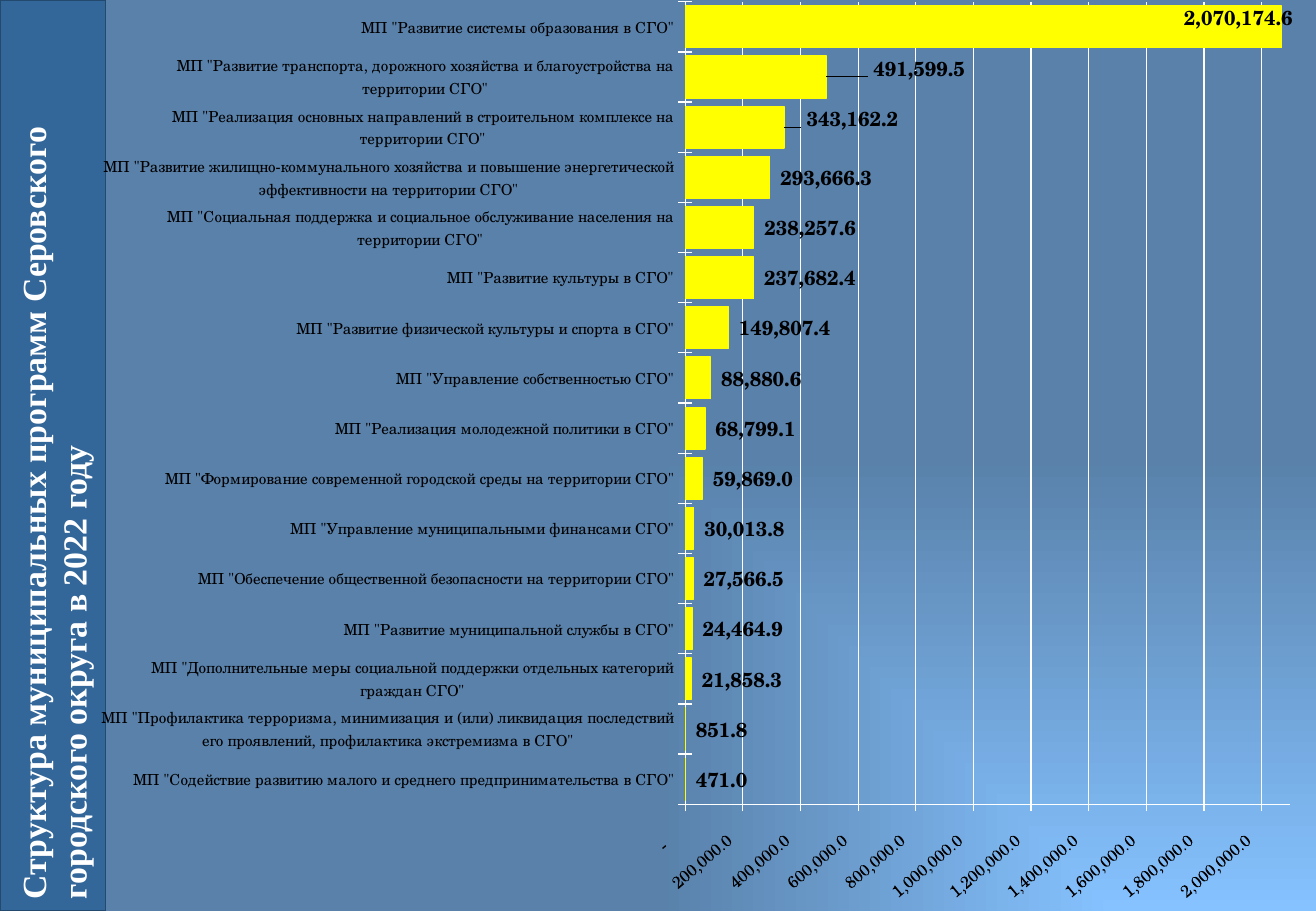
from lxml import etree
from pptx import Presentation
from pptx.chart.data import CategoryChartData as ChartData
from pptx.dml.color import RGBColor as RGB
from pptx.enum.chart import XL_CHART_TYPE as CT, XL_LABEL_POSITION as LP, XL_TICK_MARK as TM
from pptx.enum.shapes import MSO_SHAPE as SHAPE
from pptx.enum.text import MSO_ANCHOR as ANCHOR, PP_ALIGN as ALIGN
from pptx.oxml import parse_xml
from pptx.oxml.ns import nsdecls, qn
from pptx.util import Pt

COLORS = {"glow": "85C2FF", "base": "5981AA", "band": "336699", "edge": "23496F",
          "bar": "FFFF00", "white": "FFFFFF", "black": "000000"}
SERIF, SCHOOL = "Times New Roman", "TeX Gyre Schola"
NUMBER = r'_-* #,##0.0\ _₽_-;\-* #,##0.0\ _₽_-;_-* "-"?\ _₽_-;_-@_-'

TITLE = "Структура муниципальных программ Серовского городского округа в 2022 году"
PROGRAMS = [
    ('МП "Содействие развитию малого и среднего предпринимательства в СГО"', 471),
    ('МП "Профилактика терроризма, минимизация и (или) ликвидация последствий его '
     'проявлений, профилактика экстремизма в СГО"', 851.8),
    ('МП "Дополнительные меры социальной поддержки отдельных категорий граждан СГО"', 21858.3),
    ('МП "Развитие муниципальной службы в СГО"', 24464.9),
    ('МП "Обеспечение общественной безопасности на территории СГО"', 27566.5),
    ('МП "Управление муниципальными финансами СГО"', 30013.8),
    ('МП "Формирование современной городской среды на территории СГО"', 59869),
    ('МП "Реализация молодежной политики в СГО"', 68799.1),
    ('МП "Управление собственностью СГО"', 88880.6),
    ('МП "Развитие физической культуры и спорта в СГО"', 149807.4),
    ('МП "Развитие культуры в СГО"', 237682.4),
    ('МП "Социальная поддержка и социальное обслуживание населения на территории СГО"', 238257.6),
    ('МП "Развитие жилищно-коммунального хозяйства и повышение энергетической '
     'эффективности на территории СГО"', 293666.3),
    ('МП "Реализация основных направлений в строительном комплексе на территории СГО"', 343162.2),
    ('МП "Развитие транспорта, дорожного хозяйства и благоустройства на территории СГО"', 491599.5),
    ('МП "Развитие системы образования в СГО"', 2070174.6),
]
# Label shifts as shares of the chart size, by bar index
LABEL_SHIFTS = {13: (0.01, -0.01), 14: (0.03, -0.01), 15: (-0.09, -0.01)}


def set_all(obj, **values):
    for name, value in values.items():
        setattr(obj, name, value)


def layout(**values):
    items = "".join(f'<c:{k} val="{v}"/>' for k, v in values.items())
    return parse_xml(f'<c:layout {nsdecls("c")}><c:manualLayout>{items}</c:manualLayout></c:layout>')


class Deck:
    def __init__(self, width, height):
        self.prs = Presentation()
        set_all(self.prs, slide_width=Pt(width), slide_height=Pt(height))
        self.s = self.prs.slides.add_slide(self.prs.slide_layouts[6])

    def font(self, font, color, size, name, bold=False):
        set_all(font, size=Pt(size), name=name, bold=bold)
        font.color.rgb = RGB.from_string(COLORS[color])

    def line(self, line, color, width=0.75):
        line.color.rgb = RGB.from_string(COLORS[color])
        line.width = Pt(width)

    def fill(self, fill, color):
        fill.solid()
        fill.fore_color.rgb = RGB.from_string(COLORS[color])

    def corner_glow(self, inner, outer):
        fill = self.s.background.fill
        fill.gradient()
        for stop, color in zip(fill.gradient_stops, (inner, outer)):
            stop.color.rgb = RGB.from_string(COLORS[color])
        grad = self.s.element.find(".//" + qn("a:gradFill"))
        grad.remove(grad.find(qn("a:lin")))
        sweep = etree.SubElement(grad, qn("a:path"), {"path": "rect"})
        etree.SubElement(sweep, qn("a:fillToRect"), {"l": "100000", "t": "100000"})

    def side_title(self, text, x, y, w, h):
        sp = self.s.shapes.add_shape(SHAPE.RECTANGLE, Pt(x), Pt(y), Pt(w), Pt(h))
        sp.rotation = 270
        sp.shadow.inherit = False
        self.fill(sp.fill, "band")
        self.line(sp.line, "edge", 1)
        tf = sp.text_frame
        set_all(tf, word_wrap=True, vertical_anchor=ANCHOR.MIDDLE)
        p = tf.paragraphs[0]
        p.alignment = ALIGN.LEFT
        r = p.add_run()
        r.text = text
        self.font(r.font, "white", 20, SERIF, True)

    def axis(self, axis, size):
        set_all(axis, major_tick_mark=TM.CROSS, minor_tick_mark=TM.NONE)
        self.font(axis.tick_labels.font, "black", size, SCHOOL)
        self.line(axis.format.line, "white")

    def bars(self, rows, x, y, w, h):
        data = ChartData()
        data.categories = [name for name, _ in rows]
        data.add_series("Series 1", [value for _, value in rows])
        chart = self.s.shapes.add_chart(CT.BAR_CLUSTERED, Pt(x), Pt(y), Pt(w), Pt(h), data).chart
        set_all(chart, has_legend=False, has_title=False)
        self.font(chart.font, "white", 10, SCHOOL)
        area = chart.plots[0]
        set_all(area, gap_width=20, vary_by_categories=False)

        # Axes and grid
        cat, val = chart.category_axis, chart.value_axis
        self.axis(cat, 9)
        self.axis(val, 10)
        set_all(val, minimum_scale=0, maximum_scale=2100000, major_unit=200000,
                has_major_gridlines=True)
        self.line(val.major_gridlines.format.line, "white")
        set_all(val.tick_labels, number_format=NUMBER, number_format_is_linked=False)
        val.format.line.width = Pt(0.75)
        val._element.find(".//" + qn("a:bodyPr")).set("rot", str(-40 * 60000))

        # Bars and value labels
        series = area.series[0]
        self.fill(series.format.fill, "bar")
        self.line(series.format.line, "bar")
        labels = series.data_labels
        set_all(labels, show_value=True, position=LP.OUTSIDE_END,
                number_format=NUMBER, number_format_is_linked=False)
        self.font(labels.font, "black", 12, SCHOOL, True)
        for i, (dx, dy) in LABEL_SHIFTS.items():
            label = series.points[i].data_label
            self.font(label.font, "black", 12, SCHOOL, True)
            label.position = LP.OUTSIDE_END
            dlbl = labels._element.find(f'{qn("c:dLbl")}[{qn("c:idx")}][@val]') or next(
                d for d in labels._element.findall(qn("c:dLbl"))
                if d.find(qn("c:idx")).get("val") == str(i))
            dlbl.find(qn("c:idx")).addnext(layout(x=dx, y=dy))

        # Plot placement
        plot_area = chart._chartSpace.find(".//" + qn("c:plotArea"))
        for old in plot_area.findall(qn("c:layout")):
            plot_area.remove(old)
        plot_area.insert(0, layout(layoutTarget="inner", xMode="edge", yMode="edge",
                                   x=0.476, y=0.002, w=0.503, h=0.881))


def main():
    deck = Deck(780, 540)
    deck.corner_glow("glow", "base")
    deck.side_title(TITLE, -238.7, 238.7, 540, 62.6)
    deck.bars(PROGRAMS, 60, 0, 720, 540)
    deck.prs.save("out.pptx")


if __name__ == "__main__":
    main()
